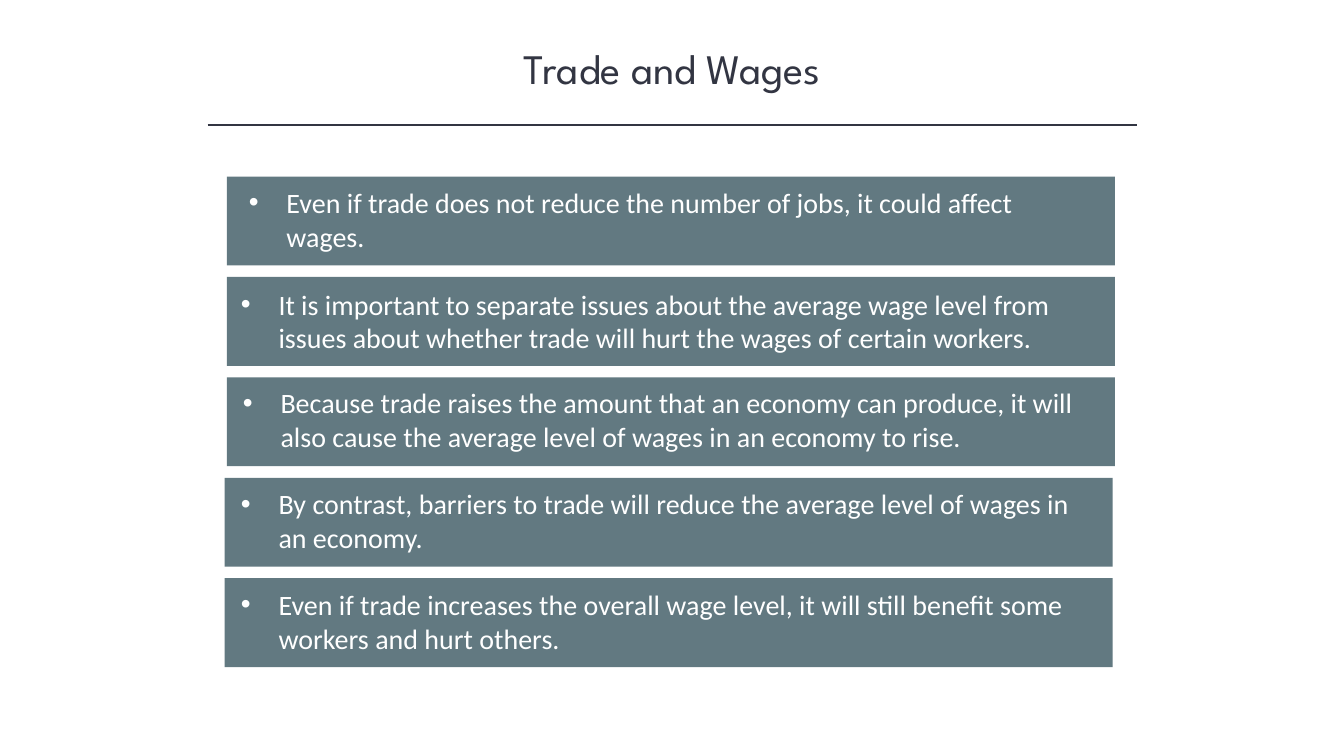
"""Build the Trade and Wages slide with five bulleted bars."""
import dataclasses
import typing

import lxml.etree
import pptx
import pptx.dml.color
import pptx.enum.shapes
import pptx.enum.text
import pptx.oxml.ns
import pptx.util

Cm = pptx.util.Cm
Pt = pptx.util.Pt
qn = pptx.oxml.ns.qn

INK = "323542"
SLATE = "627981"
WHITE = "FFFFFF"

TOP, STEP = 4.45, 2.53
BAR = (22.38, 2.24)
LABEL = (21.69, 1.96)
INDENT = Cm(0.95)

FRAME = {
    "word_wrap": True,
    "auto_size": pptx.enum.text.MSO_AUTO_SIZE.SHAPE_TO_FIT_TEXT,
    "vertical_anchor": pptx.enum.text.MSO_ANCHOR.TOP,
}
HEAD = {"name": "League Spartan", "size": Pt(30)}
BODY = {"name": "Calibri", "size": Pt(20)}


@dataclasses.dataclass
class Point:
    """One bar: its left edge, the label's left edge and drop, and the text."""

    left: float
    inset: float
    drop: float
    text: str


POINTS = [
    Point(5.72, 6.02, 0.1, "Even if trade does not reduce the number of jobs, it could affect wages."),
    Point(5.72, 5.82, 0.13, "It is important to separate issues about the average wage level from "
          "issues about whether trade will hurt the wages of certain workers."),
    Point(5.72, 5.87, 0.09, "Because trade raises the amount that an economy can produce, it will "
          "also cause the average level of wages in an economy to rise."),
    Point(5.66, 5.82, 0.1, "By contrast, barriers to trade will reduce the average level of wages in an economy."),
    Point(5.66, 5.82, 0.11, "Even if trade increases the overall wage level, it will still benefit some "
          "workers and hurt others."),
]


def color(code: str) -> pptx.dml.color.RGBColor:
    """Turn a hex string into a colour."""
    return pptx.dml.color.RGBColor.from_string(code)


def apply(target: typing.Any, values: dict) -> None:
    """Set each named attribute on the target."""
    for name, value in values.items():
        setattr(target, name, value)


def write(shape: typing.Any, text: str, font: dict, code: str, align: typing.Any) -> typing.Any:
    """Write one paragraph into a shape and return it."""
    frame = shape.text_frame
    apply(frame, FRAME)
    para = frame.paragraphs[0]
    para.alignment = align
    run = para.add_run()
    run.text = text
    apply(run.font, font)
    run.font.color.rgb = color(code)
    return para


def bullet(para: typing.Any) -> None:
    """Give a paragraph a hanging bullet."""
    props = para._p.get_or_add_pPr()
    props.set("marL", str(INDENT))
    props.set("indent", str(-INDENT))
    lxml.etree.SubElement(props, qn("a:buFont")).set("typeface", "Arial")
    lxml.etree.SubElement(props, qn("a:buChar")).set("char", "•")


def block(shapes: typing.Any, left: float, top: float, size: tuple[float, float]) -> typing.Any:
    """Draw a plain slate rectangle."""
    kind = pptx.enum.shapes.MSO_SHAPE.RECTANGLE
    shape = shapes.add_shape(kind, Cm(left), Cm(top), *map(Cm, size))
    shape.shadow.inherit = False
    shape.fill.solid()
    shape.fill.fore_color.rgb = color(SLATE)
    shape.line.fill.background()
    return shape


def title(shapes: typing.Any) -> None:
    """Draw the title and the rule under it."""
    box = shapes.add_textbox(Cm(4.24), Cm(0.94), Cm(25.4), Cm(1.55))
    write(box, "Trade and Wages", HEAD, INK, pptx.enum.text.PP_ALIGN.CENTER)
    kind = pptx.enum.shapes.MSO_CONNECTOR.STRAIGHT
    rule = shapes.add_connector(kind, Cm(5.23), Cm(3.15), Cm(28.65), Cm(3.15))
    rule.line.color.rgb = color(INK)
    rule.line.width = Pt(1)
    lxml.etree.SubElement(rule._element.spPr, qn("a:effectLst"))


def row(shapes: typing.Any, point: Point, top: float) -> None:
    """Draw one bar with its bulleted label as a group."""
    group = shapes.add_group_shape().shapes
    block(group, point.left, top, BAR)
    label = block(group, point.inset, top + point.drop, LABEL)
    bullet(write(label, point.text, BODY, WHITE, pptx.enum.text.PP_ALIGN.LEFT))


def main() -> None:
    """Build and save the slide."""
    deck = pptx.Presentation()
    apply(deck, {"slide_width": Cm(33.87), "slide_height": Cm(19.05)})
    shapes = deck.slides.add_slide(deck.slide_layouts[6]).shapes
    title(shapes)
    for rank, point in enumerate(POINTS):
        row(shapes, point, TOP + rank * STEP)
    deck.save("out.pptx")


if __name__ == "__main__":
    main()
